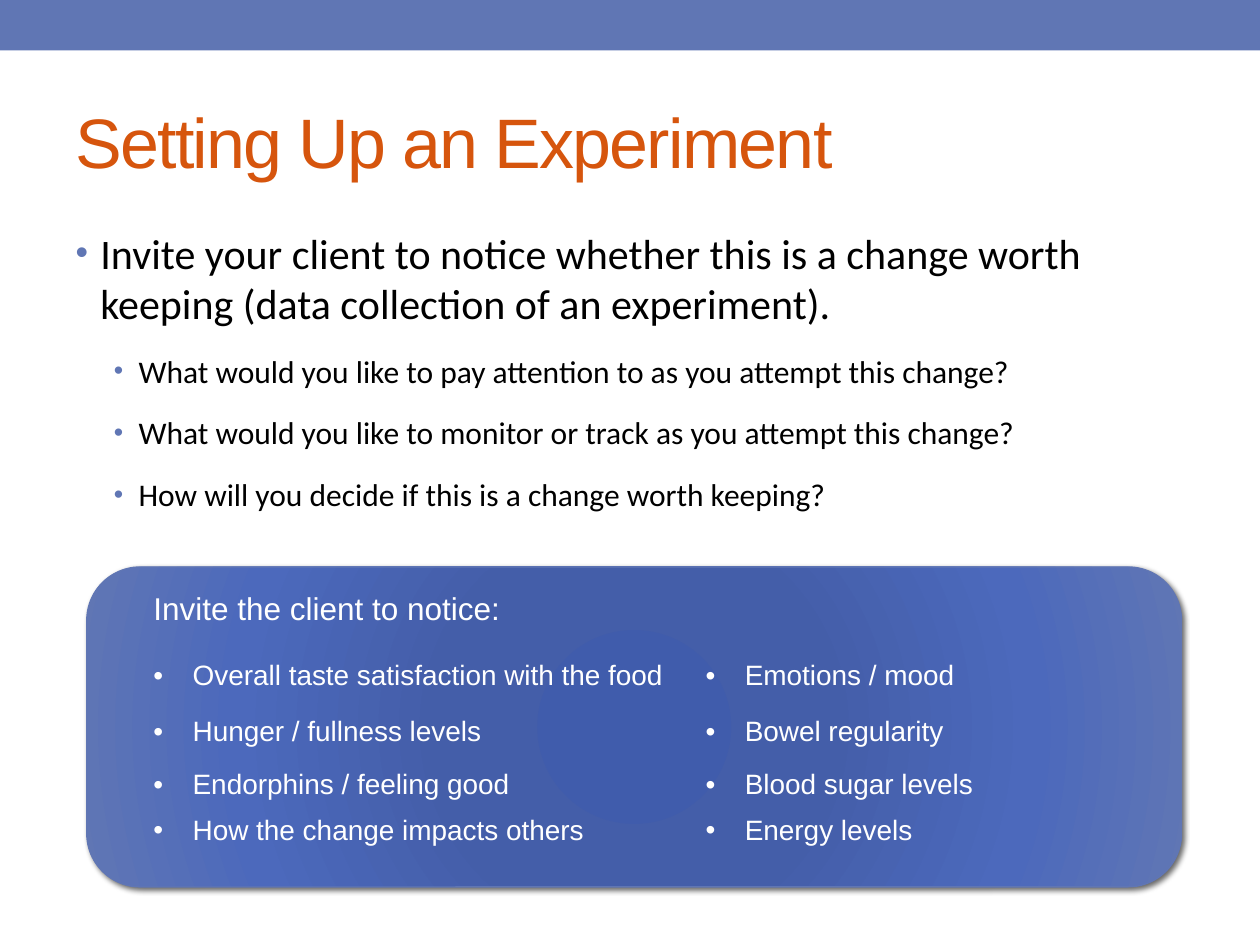
"""Build the slide on setting up an experiment with a client."""
from dataclasses import dataclass

from lxml import etree
from pptx import Presentation
from pptx.dml.color import RGBColor
from pptx.enum.shapes import MSO_SHAPE
from pptx.enum.text import MSO_ANCHOR, MSO_AUTO_SIZE, PP_ALIGN
from pptx.oxml import parse_xml
from pptx.oxml.ns import nsdecls, qn
from pptx.util import Cm, Pt

RECTANGLE = MSO_SHAPE.RECTANGLE
ROUNDED = MSO_SHAPE.ROUNDED_RECTANGLE
MIDDLE = MSO_ANCHOR.MIDDLE
TOP = MSO_ANCHOR.TOP
LEFT = PP_ALIGN.LEFT
NO_AUTOFIT = MSO_AUTO_SIZE.NONE

BLUE, ORANGE, BLACK, WHITE = "6076B4", "D6550D", "000000", "FFFFFF"
GRADIENT = ((0, "405CAC"), (34, "445EA9"), (70, "4C69BC"), (100, BLUE))
PLAIN_TABLE_STYLE = "{2D5ABB26-0587-4C30-8999-92F81FD0307C}"


@dataclass(frozen=True)
class Box:
    """Place and size in centimetres."""

    left: float
    top: float
    width: float
    height: float

    def lengths(self) -> tuple:
        """Return the four values as lengths."""
        return Cm(self.left), Cm(self.top), Cm(self.width), Cm(self.height)


@dataclass(frozen=True)
class TextStyle:
    """Font of a run."""

    font: str
    size: int
    color: str


@dataclass(frozen=True)
class Bullet:
    """Bullet indents in centimetres, with optional colour and size."""

    margin: float
    hanging: float
    color: str = ""
    percent: int = 100


@dataclass(frozen=True)
class ListItem:
    """One paragraph of the main list."""

    text: str
    level: int


TITLE_STYLE = TextStyle("Arial", 40, ORANGE)
HEADING_STYLE = TextStyle("Arial", 18, WHITE)
CELL_STYLE = TextStyle("Arial", 16, WHITE)
LEVEL_STYLES = (TextStyle("Calibri", 24, BLACK), TextStyle("Calibri", 18, BLACK))
LEVEL_BULLETS = (Bullet(0.5, 0.5, BLUE, 85), Bullet(1.27, 0.5, BLUE, 85))
CELL_BULLET = Bullet(0.79, 0.79)

LIST_ITEMS = (
    ListItem("Invite your client to notice whether this is a change worth "
             "keeping (data collection of an experiment).", 0),
    ListItem("What would you like to pay attention to as you attempt this change?", 1),
    ListItem("What would you like to monitor or track as you attempt this change?", 1),
    ListItem("How will you decide if this is a change worth keeping?", 1),
)
NOTICE_HEADING = "Invite the client to notice:"
NOTICE_ROWS = (
    ("Overall taste satisfaction with the food", "Emotions / mood"),
    ("Hunger / fullness levels", "Bowel regularity"),
    ("Endorphins / feeling good", "Blood sugar levels"),
    ("How the change impacts others", "Energy levels"),
)
COLUMN_WIDTHS = (11.13, 8.38)
ROW_HEIGHTS = (1.37, 1.14, 1.07, 0.91, 1.55)


def rgb(value: str) -> RGBColor:
    """Turn a hex string into a colour."""
    return RGBColor.from_string(value)


def add_run(paragraph, text: str, style: TextStyle):
    """Add one formatted run to a paragraph."""
    run = paragraph.add_run()
    run.text = text
    run.font.name = style.font
    run.font.size = Pt(style.size)
    run.font.color.rgb = rgb(style.color)
    return run


def set_bullet(paragraph, bullet: Bullet) -> None:
    """Give a paragraph a round bullet with a hanging indent."""
    properties = paragraph._p.get_or_add_pPr()
    properties.set("marL", str(Cm(bullet.margin)))
    properties.set("indent", str(-Cm(bullet.hanging)))
    if bullet.color:
        color = etree.SubElement(properties, qn("a:buClr"))
        etree.SubElement(color, qn("a:srgbClr"), val=bullet.color)
    etree.SubElement(properties, qn("a:buSzPct"), val=str(bullet.percent * 1000))
    etree.SubElement(properties, qn("a:buFont"), typeface="Arial")
    etree.SubElement(properties, qn("a:buChar"), char="•")


def place(shape, box: Box) -> None:
    """Move and size a placeholder."""
    shape.left, shape.top, shape.width, shape.height = box.lengths()


def add_band(slide, box: Box) -> None:
    """Draw the plain band along the top edge."""
    band = slide.shapes.add_shape(RECTANGLE, *box.lengths())
    band.shadow.inherit = False
    band.fill.solid()
    band.fill.fore_color.rgb = rgb(BLUE)
    band.line.fill.background()


def fill_title(title, box: Box, text: str) -> None:
    """Place and write the title."""
    place(title, box)
    frame = title.text_frame
    frame.auto_size = NO_AUTOFIT
    frame.vertical_anchor = MIDDLE
    paragraph = frame.paragraphs[0]
    paragraph.alignment = LEFT
    run = add_run(paragraph, text, TITLE_STYLE)
    run.font._element.set("spc", "-100")


def fill_list(body, box: Box, items: tuple[ListItem, ...]) -> None:
    """Place and write the bulleted list."""
    place(body, box)
    frame = body.text_frame
    frame.auto_size = NO_AUTOFIT
    frame.vertical_anchor = TOP
    for index, item in enumerate(items):
        paragraph = frame.add_paragraph() if index else frame.paragraphs[0]
        style = LEVEL_STYLES[item.level]
        paragraph.level = item.level
        paragraph.space_before = Pt(style.size * 0.2)
        paragraph.space_after = Pt(10)
        set_bullet(paragraph, LEVEL_BULLETS[item.level])
        add_run(paragraph, item.text, style)


def add_panel(slide, box: Box) -> None:
    """Draw the rounded panel with a radial gradient and a shadow."""
    panel = slide.shapes.add_shape(ROUNDED, *box.lengths())
    panel.line.color.rgb = rgb(BLUE)
    panel.line.width = Pt(0.75)
    stops = "".join(f'<a:gs pos="{position * 1000}"><a:srgbClr val="{color}"/></a:gs>'
                    for position, color in GRADIENT)
    properties = panel._element.spPr
    properties.find(qn("a:prstGeom")).addnext(parse_xml(
        f'<a:gradFill {nsdecls("a")} rotWithShape="1"><a:gsLst>{stops}</a:gsLst>'
        '<a:path path="circle"><a:fillToRect l="50000" t="50000" r="50000" b="50000"/>'
        '</a:path></a:gradFill>'))
    properties.append(parse_xml(
        f'<a:effectLst {nsdecls("a")}><a:outerShdw blurRad="{Pt(3)}" dist="{Pt(2)}" '
        f'dir="2700000" rotWithShape="0"><a:srgbClr val="{BLACK}">'
        '<a:alpha val="60000"/></a:srgbClr></a:outerShdw></a:effectLst>'))


def add_notice_table(slide, box: Box) -> None:
    """Add the table of things to notice."""
    frame = slide.shapes.add_table(len(ROW_HEIGHTS), len(COLUMN_WIDTHS), *box.lengths())
    table = frame.table
    table.first_row = table.horz_banding = False
    next(frame._element.iter(qn("a:tableStyleId"))).text = PLAIN_TABLE_STYLE
    for column, width in zip(table.columns, COLUMN_WIDTHS):
        column.width = Cm(width)
    for row, height in zip(table.rows, ROW_HEIGHTS):
        row.height = Cm(height)
    for cell in table.iter_cells():
        cell.fill.background()
    table.cell(0, 0).merge(table.cell(0, 1))
    add_run(table.cell(0, 0).text_frame.paragraphs[0], NOTICE_HEADING, HEADING_STYLE)
    for row_index, texts in enumerate(NOTICE_ROWS, start=1):
        for column_index, text in enumerate(texts):
            paragraph = table.cell(row_index, column_index).text_frame.paragraphs[0]
            set_bullet(paragraph, CELL_BULLET)
            add_run(paragraph, text, CELL_STYLE)


def main() -> None:
    """Build and save the presentation."""
    presentation = Presentation()
    presentation.slide_width, presentation.slide_height = Cm(25.4), Cm(19.05)
    slide = presentation.slides.add_slide(presentation.slide_layouts[1])
    add_band(slide, Box(0, 0, 25.4, 1.02))
    fill_title(slide.shapes.title, Box(1.27, 1.47, 22.86, 2.74), "Setting Up an Experiment")
    fill_list(slide.placeholders[1], Box(1.27, 4.45, 22.86, 13.54), LIST_ITEMS)
    add_panel(slide, Box(1.75, 11.43, 22.07, 6.45))
    add_notice_table(slide, Box(2.84, 11.81, sum(COLUMN_WIDTHS), sum(ROW_HEIGHTS)))
    presentation.save("out.pptx")


if __name__ == "__main__":
    main()
